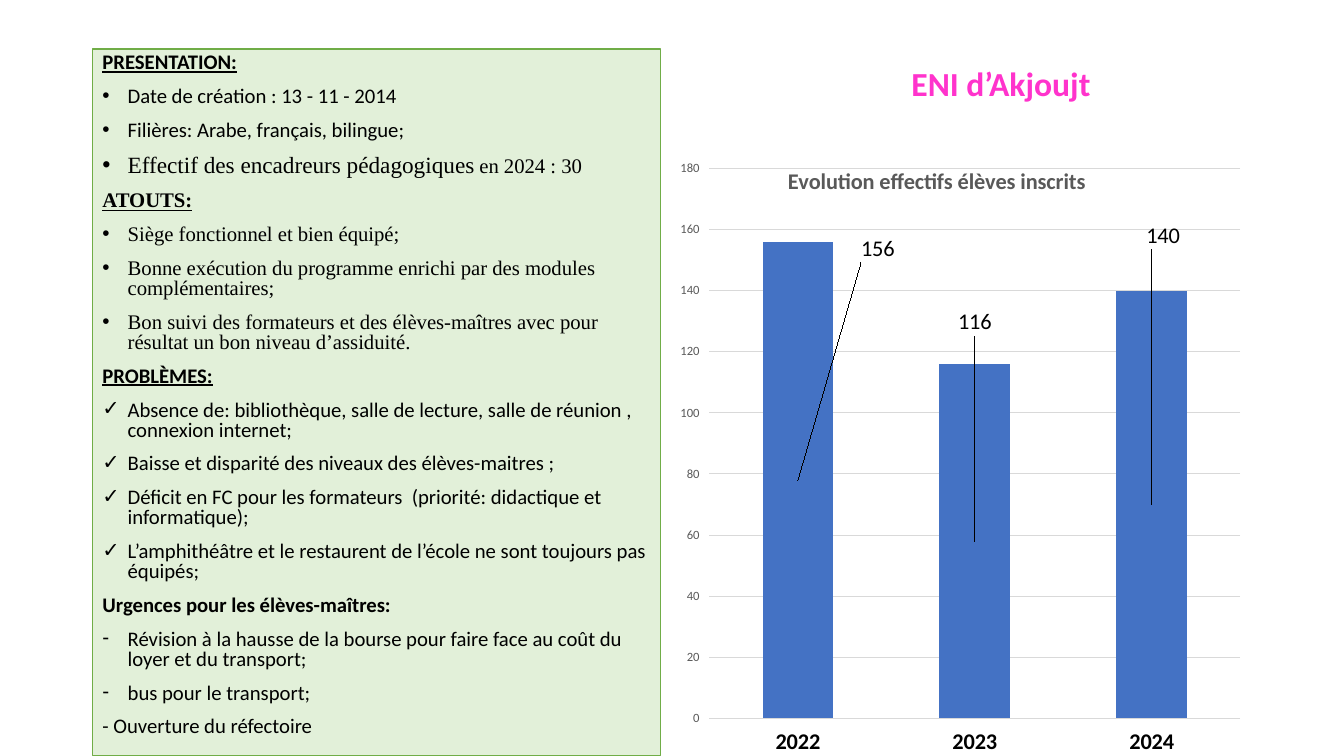
from dataclasses import dataclass

from lxml.etree import Element, SubElement
from pptx import Presentation
from pptx.chart.data import CategoryChartData
from pptx.dml.color import RGBColor
from pptx.enum.chart import XL_CHART_TYPE, XL_TICK_MARK
from pptx.enum.text import MSO_ANCHOR, MSO_AUTO_SIZE, PP_ALIGN
from pptx.oxml.ns import qn
from pptx.util import Pt


@dataclass(frozen=True)
class Theme:
    font: str = "Calibri"
    serif: str = "Times New Roman"
    black: str = "000000"
    grey: str = "595959"
    grid: str = "D9D9D9"
    pink: str = "FF33CC"
    panel: str = "E2F0D9"
    border: str = "70AD47"
    bar: str = "4472C4"
    title: float = 24
    body: float = 14.8
    large: float = 16.6
    label: float = 16
    tick: float = 9


T = Theme()

# Each section: heading, underlined, heading font, bullet, item font, items
SECTIONS = [
    ("PRESENTATION:", True, T.font, "•", T.font, [
        "Date de création : 13 - 11 - 2014",
        "Filières: Arabe, français, bilingue;",
        [("Effectif des encadreurs pédagogiques", T.serif, T.large),
         (" en 2024 : 30", T.serif, T.body)]]),
    ("ATOUTS:", True, T.serif, "•", T.serif, [
        "Siège fonctionnel et bien équipé;",
        "Bonne exécution du programme enrichi par des modules complémentaires;",
        "Bon suivi des formateurs et des élèves-maîtres avec pour résultat "
        "un bon niveau d’assiduité."]),
    ("PROBLÈMES:", True, T.font, "✓", T.font, [
        "Absence de: bibliothèque, salle de lecture, salle de réunion , connexion internet;",
        "Baisse et disparité des niveaux des élèves-maitres ;",
        "Déficit en FC pour les formateurs  (priorité: didactique et informatique);",
        "L’amphithéâtre et le restaurent de l’école ne sont toujours pas équipés;"]),
    ("Urgences pour les élèves-maîtres:", False, T.font, "-", T.font, [
        "Révision à la hausse de la bourse pour faire face au coût du loyer et du transport;",
        "bus pour le transport;"]),
]
CLOSING = "- Ouverture du réfectoire"

ENROLMENT = {"2022": 156, "2023": 116, "2024": 140}
LABEL_SHIFTS = [(0.14, -0.37), (0, -0.35), (0.02, -0.43)]


def set_font(font, size, color=T.black, name=T.font, bold=False, underline=False):
    font.size, font.name = Pt(size), name
    font.bold, font.underline = bold, underline
    font.color.rgb = RGBColor.from_string(color)


def add_run(p, text, size, **style):
    r = p.add_run()
    r.text = text
    set_font(r.font, size, **style)


def place(sp, box):
    sp.left, sp.top, sp.width, sp.height = (Pt(v) for v in box)


def add_title(s, box):
    sp = s.shapes.title
    place(sp, box)
    tf = sp.text_frame
    tf.auto_size, tf.vertical_anchor = MSO_AUTO_SIZE.NONE, MSO_ANCHOR.MIDDLE
    p = tf.paragraphs[0]
    p.alignment, p.line_spacing = PP_ALIGN.CENTER, 0.9
    add_run(p, "ENI d’Akjoujt", T.title, color=T.pink, bold=True)


def add_paragraph(tf, bullet=None):
    first = tf.paragraphs[0]
    p = tf.add_paragraph() if first.runs else first
    p.alignment, p.line_spacing = PP_ALIGN.LEFT, 0.8
    p.space_before, p.space_after = Pt(10), Pt(0)
    pPr = p._p.get_or_add_pPr()
    indent = Pt(18) if bullet else 0
    pPr.set("marL", str(indent))
    pPr.set("indent", str(-indent))
    if bullet:
        SubElement(pPr, qn("a:buFont"), typeface="Arial")
        SubElement(pPr, qn("a:buChar"), char=bullet)
    else:
        SubElement(pPr, qn("a:buNone"))
    return p


def add_panel(s, box):
    sp = s.placeholders[1]
    place(sp, box)
    sp.fill.solid()
    sp.fill.fore_color.rgb = RGBColor.from_string(T.panel)
    sp.line.color.rgb = RGBColor.from_string(T.border)
    sp.line.width = Pt(0.75)
    tf = sp.text_frame
    tf.word_wrap, tf.auto_size = True, MSO_AUTO_SIZE.NONE
    tf.vertical_anchor = MSO_ANCHOR.TOP
    for heading, underline, heading_font, bullet, item_font, items in SECTIONS:
        add_run(add_paragraph(tf), heading, T.body, name=heading_font,
                bold=True, underline=underline)
        for item in items:
            p = add_paragraph(tf, bullet)
            runs = [(item, item_font, T.body)] if isinstance(item, str) else item
            for text, name, size in runs:
                add_run(p, text, size, name=name)
    add_run(add_paragraph(tf), CLOSING, T.body)


def set_layout(parent, after=None, **values):
    """Give a chart part a manual layout, placed after the named child."""
    for old in parent.findall(qn("c:layout")):
        parent.remove(old)
    layout = Element(qn("c:layout"))
    manual = SubElement(layout, qn("c:manualLayout"))
    for tag, value in values.items():
        SubElement(manual, qn(f"c:{tag}"), val=str(value))
    if after:
        parent.find(qn(after)).addnext(layout)
    else:
        parent.insert(0, layout)


def add_enrolment_chart(s, box):
    data = CategoryChartData()
    data.categories = list(ENROLMENT)
    data.add_series("Series 1", list(ENROLMENT.values()))
    chart = s.shapes.add_chart(XL_CHART_TYPE.COLUMN_STACKED,
                               *(Pt(v) for v in box), data).chart
    set_font(chart.font, 10)
    chart.has_legend = False

    # Title
    chart.has_title = True
    p = chart.chart_title.text_frame.paragraphs[0]
    add_run(p, "Evolution effectifs élèves inscrits", T.label, color=T.grey, bold=True)
    root = chart._chartSpace
    title = root.find(f".//{qn('c:title')}")
    set_layout(title, "c:tx", xMode="edge", yMode="edge", x=0.18, y=0.05)
    title.find(qn("c:overlay")).set("val", "1")

    # Axes
    cat, val = chart.category_axis, chart.value_axis
    for axis in (cat, val):
        axis.major_tick_mark = XL_TICK_MARK.OUTSIDE
        axis.format.line.fill.background()
    set_font(cat.tick_labels.font, T.label, bold=True)
    set_font(val.tick_labels.font, T.tick, color=T.grey)
    val.minimum_scale, val.maximum_scale, val.major_unit = 0, 180, 20
    grid = val.major_gridlines.format.line
    grid.color.rgb, grid.width = RGBColor.from_string(T.grid), Pt(0.75)

    # Bars and their labels
    plot = chart.plots[0]
    plot.gap_width, plot.overlap, plot.vary_by_categories = 150, 100, False
    series = plot.series[0]
    series.format.fill.solid()
    series.format.fill.fore_color.rgb = RGBColor.from_string(T.bar)
    for i in range(len(LABEL_SHIFTS)):
        set_font(series.points[i].data_label.font, T.label)
    for label, (x, y) in zip(root.iter(qn("c:dLbl")), LABEL_SHIFTS):
        set_layout(label, "c:idx", x=x, y=y)
    set_layout(root.find(f".//{qn('c:plotArea')}"), layoutTarget="inner",
               xMode="edge", yMode="edge", x=0.05, y=0.06, w=0.93, h=0.88)


def main():
    prs = Presentation()
    prs.slide_width, prs.slide_height = Pt(960), Pt(540)
    s = prs.slides.add_slide(prs.slide_layouts[1])
    add_title(s, (486, 29, 458, 65))
    add_panel(s, (66, 35, 406, 505))
    add_enrolment_chart(s, (486, 93.6, 408, 446.4))
    prs.save("out.pptx")


if __name__ == "__main__":
    main()
